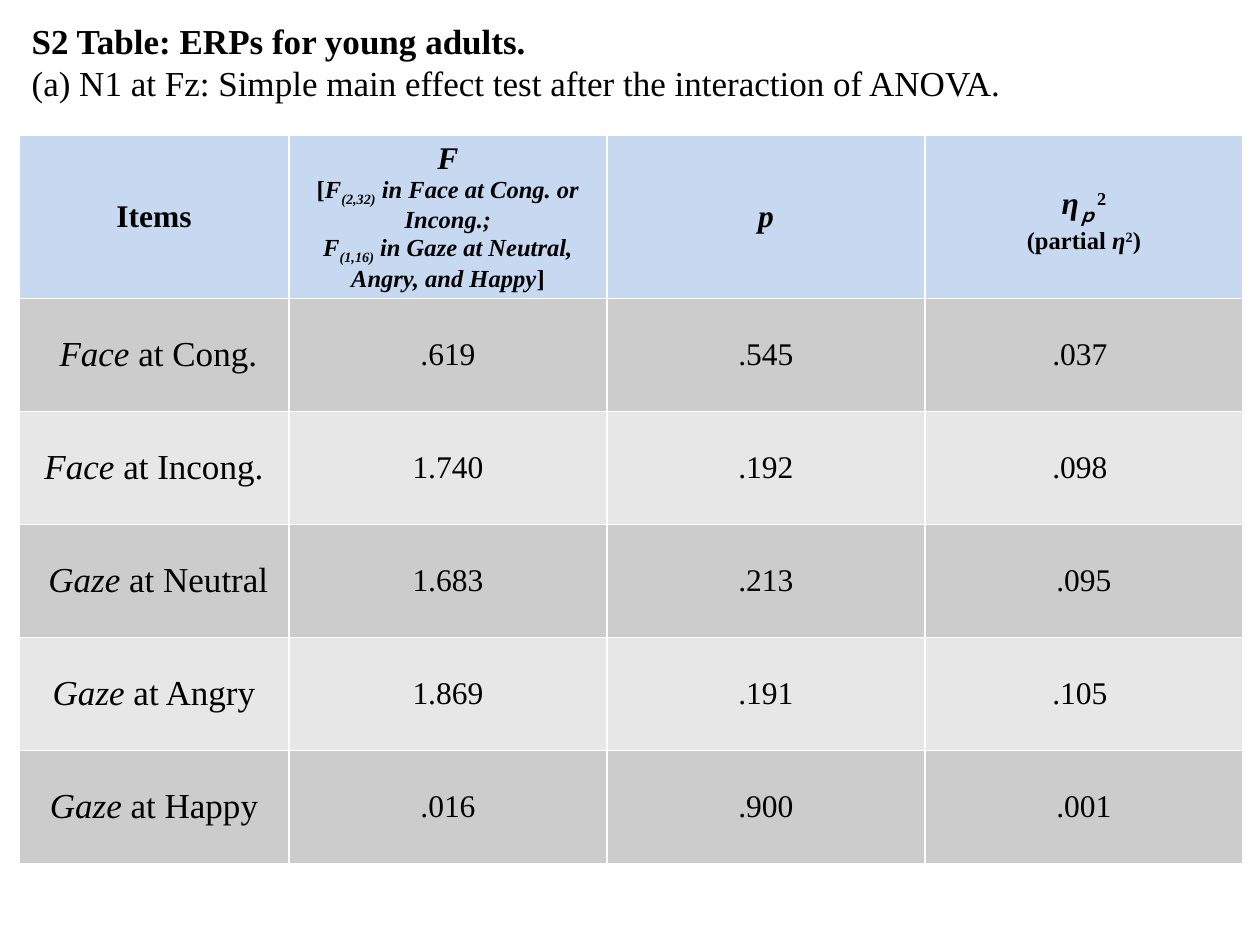
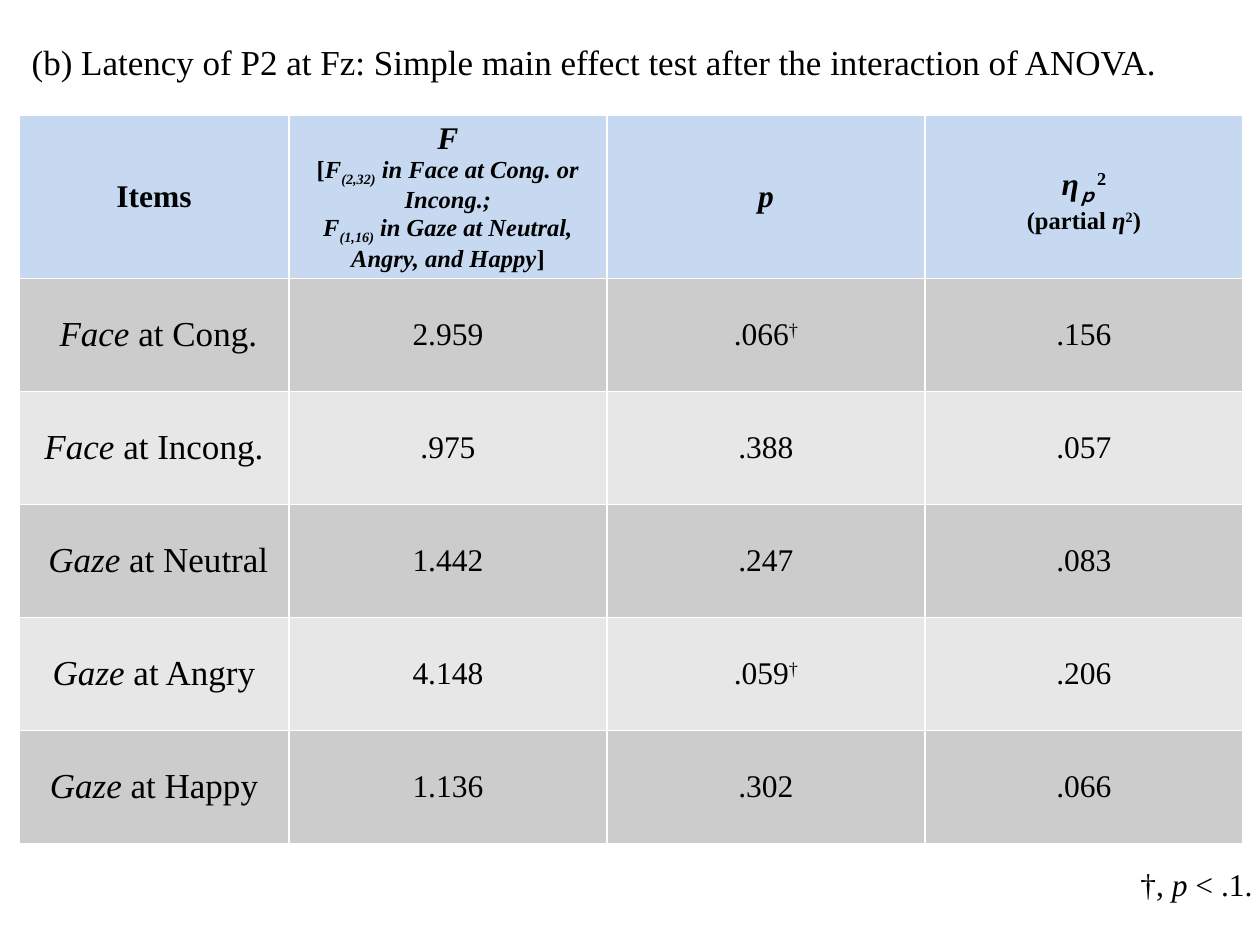
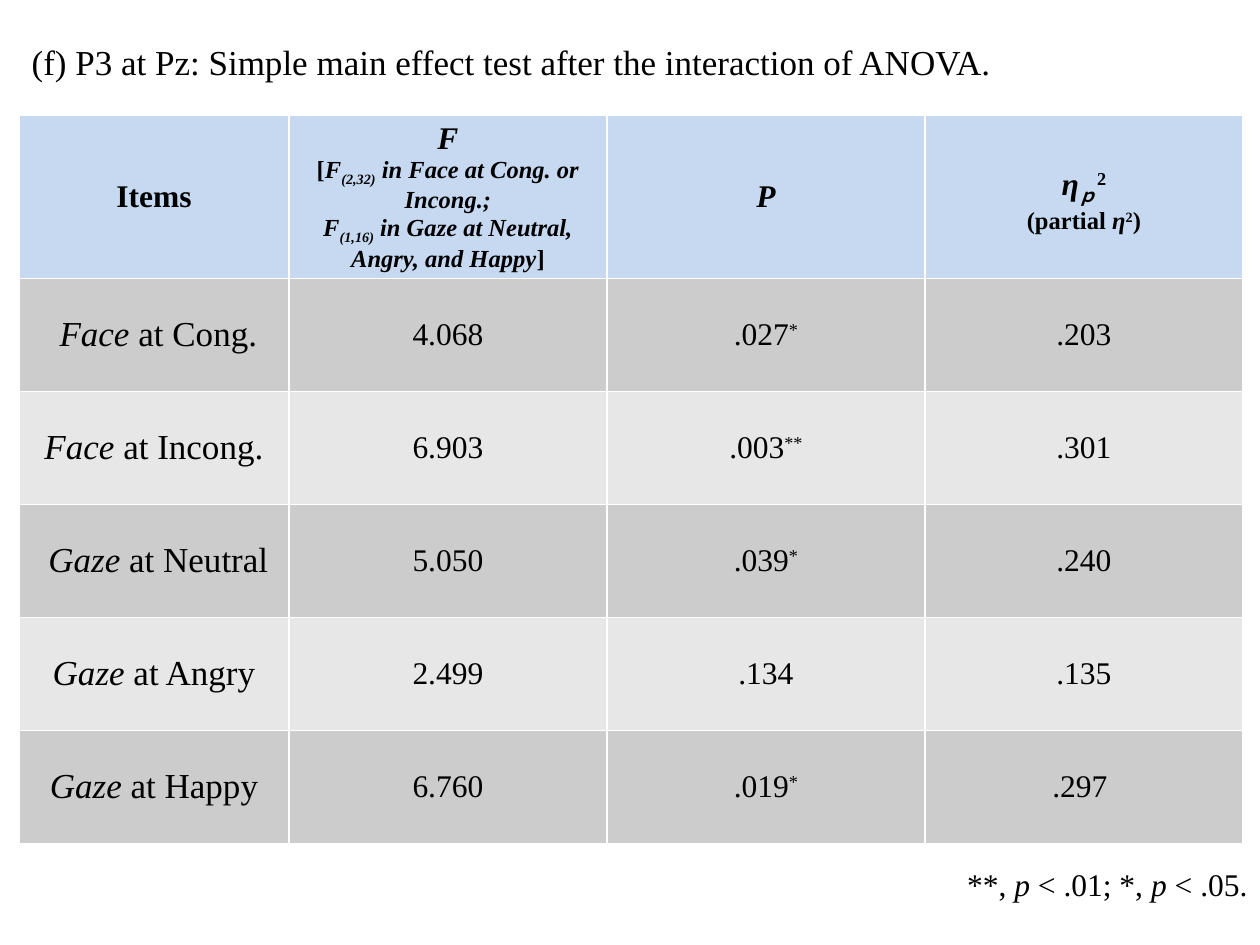
import pptx
import pptx.util
import pptx.dml.color
import pptx.enum.text

FONT = "Times New Roman"
INK, HEAD, DARK, LIGHT = "000000", "C6D9F1", "CCCCCC", "E7E7E7"
ALIGN = pptx.enum.text.PP_ALIGN
MIDDLE = pptx.enum.text.MSO_ANCHOR.MIDDLE

F_HEAD = [
    (18, [("F", "i")]),
    (14, ["[", ("F", "i"), ("(2,32)", "i-"),
          (" in Face at Cong. or Incong.;\nF", "i"), ("(1,16)", "i-"),
          (" in Gaze at Neutral, Angry, and Happy", "i"), "]"]),
]
ETA_HEAD = [
    (18, [("η", "i"), ("ｐ", "i-"), ("2", "+")]),
    (14, ["(partial ", ("η", "i"), ("2", "+"), ")"]),
]
ITEMS = [
    [" ", ("Face", "i"), " at Cong."],
    [("Face", "i"), " at Incong."],
    [" ", ("Gaze", "i"), " at Neutral"],
    [("Gaze", "i"), " at Angry"],
    [("Gaze", "i"), " at Happy"],
]
TAIL = ": Simple main effect test after the interaction of ANOVA."
SLIDES = [
    {
        "title": [("S2 Table: ERPs for young adults.\n", "b"), "(a) N1 at Fz" + TAIL],
        "top": 135,
        "prob": "p",
        "rows": [
            (".619", ".545", "", ".037 "),
            ("1.740", ".192", "", ".098 "),
            ("1.683", ".213", "", ".095"),
            ("1.869", ".191", "", ".105 "),
            (".016", ".900", "", ".001"),
        ],
    },
    {
        "title": ["(b) Latency of P2 at Fz" + TAIL],
        "top": 115,
        "prob": "p",
        "rows": [
            ("2.959", ".066", "†", ".156"),
            (".975", ".388", "", ".057"),
            ("1.442", ".247", "", ".083"),
            ("4.148", ".059", "†", ".206"),
            ("1.136", ".302", "", ".066"),
        ],
        "note": ["†, ", ("p", "i"), " < .1."],
        "left": 635,
    },
    {
        "title": ["(f) P3 at Pz" + TAIL],
        "top": 115,
        "prob": "P",
        "rows": [
            ("4.068", ".027", "*", ".203"),
            ("6.903", ".003", "**", ".301"),
            ("5.050", ".039", "*", ".240"),
            ("2.499", ".134", "", ".135"),
            ("6.760", ".019", "*", ".297 "),
        ],
        "note": ["**, ", ("p ", "i"), "< .01; *, ", ("p ", "i"), "< .05."],
        "left": 630,
    },
]

LEFT, WIDTH = 19, 1224
COLS = [270, 318, 318, 318]
ROWS = [162] + [113] * 5


def px(n):
    return round(n * 914400 / 126)


def color(code):
    return pptx.dml.color.RGBColor.from_string(code)


def write(frame, paras, align=ALIGN.CENTER, bold=False):
    for i, (size, runs) in enumerate(paras):
        para = frame.add_paragraph() if i else frame.paragraphs[0]
        para.alignment = align
        for item in runs:
            text, marks = (item, "") if isinstance(item, str) else item
            for j, part in enumerate(text.split("\n")):
                if j:
                    para.add_line_break()
                if not part:
                    continue
                run = para.add_run()
                run.text = part
                font = run.font
                font.name, font.size = FONT, pptx.util.Pt(size)
                font.bold = bold or "b" in marks
                font.italic = "i" in marks
                font.color.rgb = color(INK)
                for mark, shift in (("+", "30000"), ("-", "-25000")):
                    if mark in marks:
                        run._r.get_or_add_rPr().set("baseline", shift)


def add_title(slide, runs):
    title = slide.shapes.title
    title.left, title.top = px(LEFT), px(15)
    title.width, title.height = px(WIDTH), px(94)
    frame = title.text_frame
    frame.auto_size = pptx.enum.text.MSO_AUTO_SIZE.NONE
    frame.vertical_anchor = MIDDLE
    write(frame, [(20, runs)], align=ALIGN.LEFT)


def add_grid(slide, data):
    cells = [[[(18, ["Items"])], F_HEAD, [(18, [(data["prob"], "i")])], ETA_HEAD]]
    for item, (stat, prob, mark, eta) in zip(ITEMS, data["rows"]):
        cells.append([[(20, item)], [(18, [stat])],
                      [(18, [prob, (mark, "+")])], [(18, [eta])]])
    table = slide.shapes.add_table(
        len(ROWS), len(COLS), px(LEFT), px(data["top"]), px(WIDTH), px(sum(ROWS))).table
    for col, width in zip(table.columns, COLS):
        col.width = px(width)
    for r, (row, height) in enumerate(zip(table.rows, ROWS)):
        row.height = px(height)
        fill = (DARK if r % 2 else LIGHT) if r else HEAD
        for cell, paras in zip(row.cells, cells[r]):
            cell.fill.solid()
            cell.fill.fore_color.rgb = color(fill)
            cell.vertical_anchor = MIDDLE
            write(cell.text_frame, paras, bold=r == 0)


def add_note(slide, runs, left):
    frame = slide.shapes.add_textbox(px(left), px(859), px(630), px(50)).text_frame
    frame.word_wrap = True
    write(frame, [(18, runs)], align=ALIGN.RIGHT)


def main():
    deck = pptx.Presentation()
    deck.slide_width, deck.slide_height = px(1260), px(945)
    for data in SLIDES:
        slide = deck.slides.add_slide(deck.slide_layouts[5])
        add_title(slide, data["title"])
        add_grid(slide, data)
        if "note" in data:
            add_note(slide, data["note"], data["left"])
    deck.save("out.pptx")


if __name__ == "__main__":
    main()
